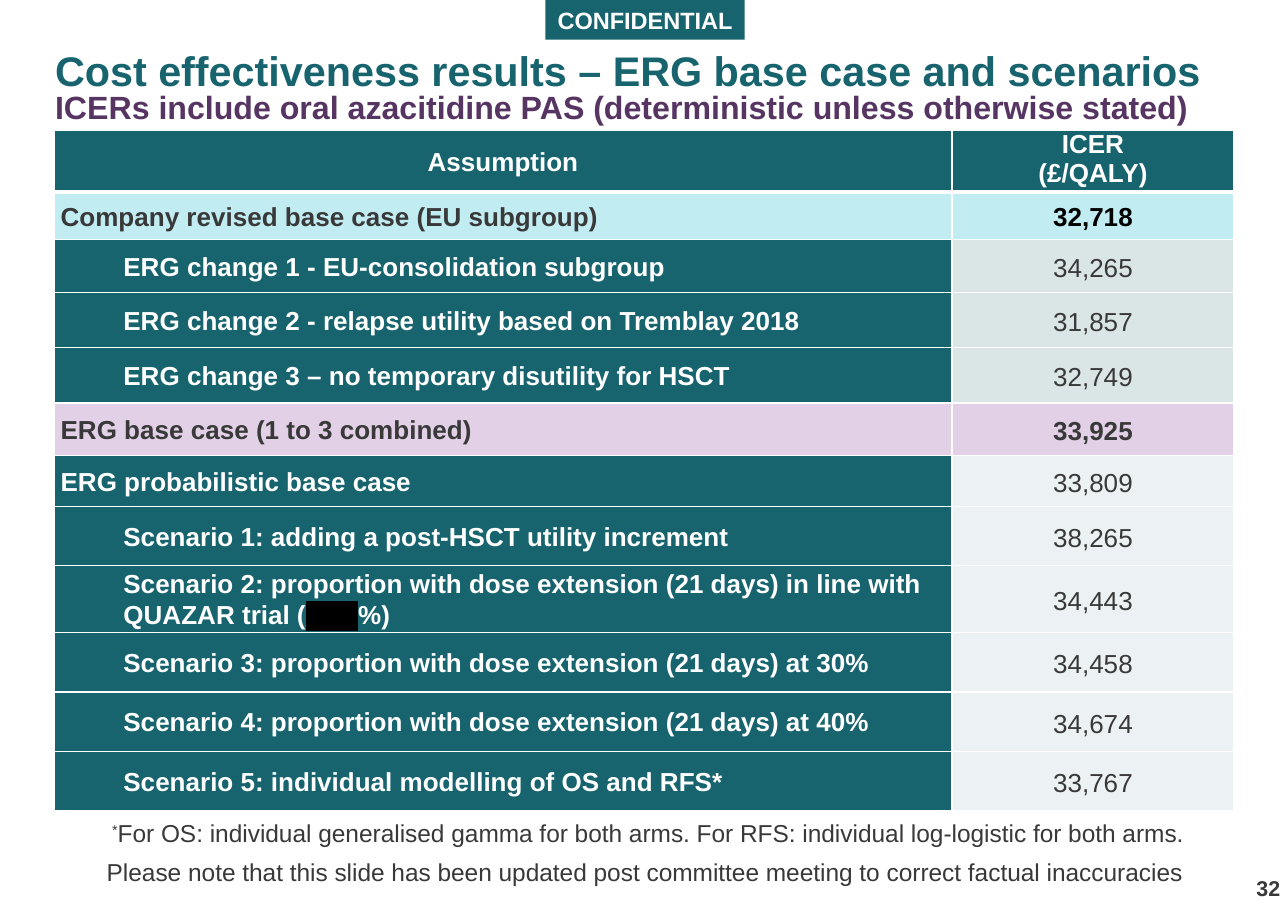
from lxml import etree
from pptx import Presentation
from pptx.dml.color import RGBColor
from pptx.enum import shapes, text
from pptx.oxml.ns import qn
from pptx.util import Inches, Pt

TEAL = RGBColor(0x18, 0x64, 0x6E)
PURPLE = RGBColor(0x57, 0x35, 0x62)
CHARCOAL = RGBColor(0x39, 0x39, 0x39)
BLACK = RGBColor(0, 0, 0)
WHITE = RGBColor(0xFF, 0xFF, 0xFF)
AQUA = RGBColor(0xC1, 0xEC, 0xF2)
LILAC = RGBColor(0xE1, 0xD0, 0xE6)
MIST = RGBColor(0xDA, 0xE5, 0xE6)
PALE = RGBColor(0xEC, 0xF2, 0xF3)

LEFT, CENTER, RIGHT = text.PP_ALIGN.LEFT, text.PP_ALIGN.CENTER, text.PP_ALIGN.RIGHT
TOP, MIDDLE, BOTTOM = text.MSO_ANCHOR.TOP, text.MSO_ANCHOR.MIDDLE, text.MSO_ANCHOR.BOTTOM

COLUMN_WIDTHS = (8.15, 2.56)
ROW_HEIGHTS = (0.56, 0.43, 0.48, 0.5, 0.5, 0.48, 0.46, 0.54, 0.58, 0.54, 0.54, 0.54)
DOSE = "proportion with dose extension (21 days)"
REDACTED = "XXX"
BASE_CASES = {"Company revised base case (EU subgroup)": AQUA,
              "ERG base case (1 to 3 combined)": LILAC}
RESULTS = (
    (("Company revised base case (EU subgroup)",), "32,718"),
    (("ERG change 1 - EU-consolidation subgroup",), "34,265"),
    (("ERG change 2 - relapse utility based on Tremblay 2018",), "31,857"),
    (("ERG change 3 – no temporary disutility for HSCT",), "32,749"),
    (("ERG base case (1 to 3 combined)",), "33,925"),
    (("ERG probabilistic base case",), "33,809"),
    (("Scenario 1: adding a post-HSCT utility increment",), "38,265"),
    ((f"Scenario 2: {DOSE} in line with QUAZAR trial (", REDACTED, "%)"), "34,443"),
    ((f"Scenario 3: {DOSE} at 30%",), "34,458"),
    ((f"Scenario 4: {DOSE} at 40%",), "34,674"),
    (("Scenario 5: individual modelling of OS and RFS*",), "33,767"),
)


def add_run(paragraph, wording, size, color, bold=False):
    """Append one formatted run and return it."""
    run = paragraph.add_run()
    run.text = wording
    run.font.name = "Arial"
    run.font.size = Pt(size)
    run.font.bold = bold
    run.font.color.rgb = color
    return run


def redact(run):
    """Black out a run with an underline and a highlight."""
    run.font.underline = True
    highlight = etree.Element(qn("a:highlight"))
    etree.SubElement(highlight, qn("a:srgbClr"), val=str(BLACK))
    run.font._element.find(qn("a:solidFill")).addnext(highlight)


def add_line(slide, box, align=LEFT, anchor=TOP, inset=(0, 0)):
    """Add a wrapping text box and return its paragraph."""
    frame = slide.shapes.add_textbox(*map(Inches, box)).text_frame
    frame.word_wrap = True
    frame.vertical_anchor = anchor
    frame.margin_left = frame.margin_right = Inches(inset[0])
    frame.margin_top = frame.margin_bottom = Inches(inset[1])
    frame.paragraphs[0].alignment = align
    return frame.paragraphs[0]


def add_banner(slide):
    """Add the confidentiality mark at the top edge."""
    banner = slide.shapes.add_shape(shapes.MSO_SHAPE.RECTANGLE, Inches(4.95), 0,
                                    Inches(1.81), Inches(0.36))
    banner.shadow.inherit = False
    banner.fill.solid()
    banner.fill.fore_color.rgb = TEAL
    banner.line.fill.background()
    banner.text_frame.word_wrap = False
    mark = banner.text_frame.paragraphs[0]
    mark.alignment = CENTER
    add_run(mark, "CONFIDENTIAL", 15.4, WHITE, True)


def style_cell(cell, fill, inset=0.06, anchor=MIDDLE, bottom=1):
    """Set a cell's fill, insets, anchor and white borders."""
    cell.fill.solid()
    cell.fill.fore_color.rgb = fill
    cell.margin_left = cell.margin_right = Inches(inset)
    cell.margin_top = cell.margin_bottom = 0
    cell.vertical_anchor = anchor
    properties = cell._tc.get_or_add_tcPr()
    for place, (side, width) in enumerate(zip("LRTB", (1, 1, 1, bottom))):
        border = etree.Element(qn(f"a:ln{side}"), w=str(Pt(width)))
        paint = etree.SubElement(border, qn("a:solidFill"))
        etree.SubElement(paint, qn("a:srgbClr"), val=str(WHITE))
        properties.insert(place, border)


def space_entry(cell, align, spacing):
    """Return the cell's paragraph with the table's spacing."""
    entry = cell.text_frame.paragraphs[0]
    entry.alignment = align
    entry.line_spacing = spacing
    entry.space_before = entry.space_after = Pt(2)
    return entry


def fill_header(assumption, icer):
    """Write the two header cells."""
    style_cell(assumption, TEAL, bottom=3)
    add_run(space_entry(assumption, CENTER, 1.07), "Assumption", 17, WHITE, True)
    style_cell(icer, TEAL, anchor=TOP, bottom=3)
    frame = icer.text_frame
    for heading, wording in ((frame.paragraphs[0], "ICER"),
                             (frame.add_paragraph(), "(£/QALY)")):
        heading.alignment = CENTER
        add_run(heading, wording, 17, WHITE, True)


def fill_result(assumption, icer, parts, value, value_fill):
    """Write one result row."""
    base_fill = BASE_CASES.get(parts[0])
    is_company = base_fill == AQUA
    style_cell(assumption, base_fill or TEAL)
    label = space_entry(assumption, LEFT, 1.07)
    if parts[0].startswith(("ERG change", "Scenario")):
        label.level = 1
        indent = label._p.get_or_add_pPr()
        indent.set("marL", str(Inches(0.57)))
        indent.set("indent", "0")
    for part in parts:
        if part == REDACTED:
            redact(add_run(label, part, 17, BLACK, True))
        else:
            add_run(label, part, 17, CHARCOAL if base_fill else WHITE, True)
    style_cell(icer, base_fill or value_fill, 0.06 if is_company else 0.07)
    figure = space_entry(icer, CENTER, 1.07 if is_company else 1.15)
    add_run(figure, value, 17, BLACK if is_company else CHARCOAL, bool(base_fill))


def add_results(slide):
    """Add the table of ICERs."""
    table = slide.shapes.add_table(len(ROW_HEIGHTS), 2, Inches(0.49), Inches(1.18),
                                   Inches(sum(COLUMN_WIDTHS)),
                                   Inches(sum(ROW_HEIGHTS))).table
    table.horz_banding = False
    for column, width in zip(table.columns, COLUMN_WIDTHS):
        column.width = Inches(width)
    for row, height in zip(table.rows, ROW_HEIGHTS):
        row.height = Inches(height)
    fill_header(table.cell(0, 0), table.cell(0, 1))
    for row, (parts, value) in enumerate(RESULTS, 1):
        fill_result(table.cell(row, 0), table.cell(row, 1), parts, value,
                    MIST if row < 5 else PALE)


def main():
    """Build the slide and save it."""
    deck = Presentation()
    deck.slide_width, deck.slide_height = Inches(11.69), Inches(8.27)
    slide = deck.slides.add_slide(deck.slide_layouts[6])
    add_banner(slide)
    title = add_line(slide, (0.5, 0.28, 10.57, 0.84))
    title.line_spacing = Pt(42)
    add_run(title, "Cost effectiveness results – ERG base case and scenarios", 27, TEAL, True)
    page = add_line(slide, (11.07, 7.82, 0.55, 0.36), RIGHT, BOTTOM)
    add_run(page, "32", 14, CHARCOAL, True)
    subtitle = add_line(slide, (0.5, 0.79, 10.71, 0.35))
    add_run(subtitle, "ICERs include oral azacitidine PAS (deterministic unless otherwise stated)",
            21, PURPLE, True)
    add_results(slide)
    footnote = add_line(slide, (0.52, 7.38, 10.73, 0.37), CENTER, inset=(0.1, 0.05))
    add_run(footnote, "*", 16, CHARCOAL).font._element.set("baseline", "30000")
    add_run(footnote, "For OS: individual generalised gamma for both arms. "
            "For RFS: individual log-logistic for both arms.", 16, CHARCOAL)
    update = add_line(slide, (0.57, 7.78, 10.63, 0.27), CENTER)
    add_run(update, "Please note that this slide has been updated post committee meeting "
            "to correct factual inaccuracies ", 16, CHARCOAL)
    deck.save("out.pptx")


if __name__ == "__main__":
    main()
